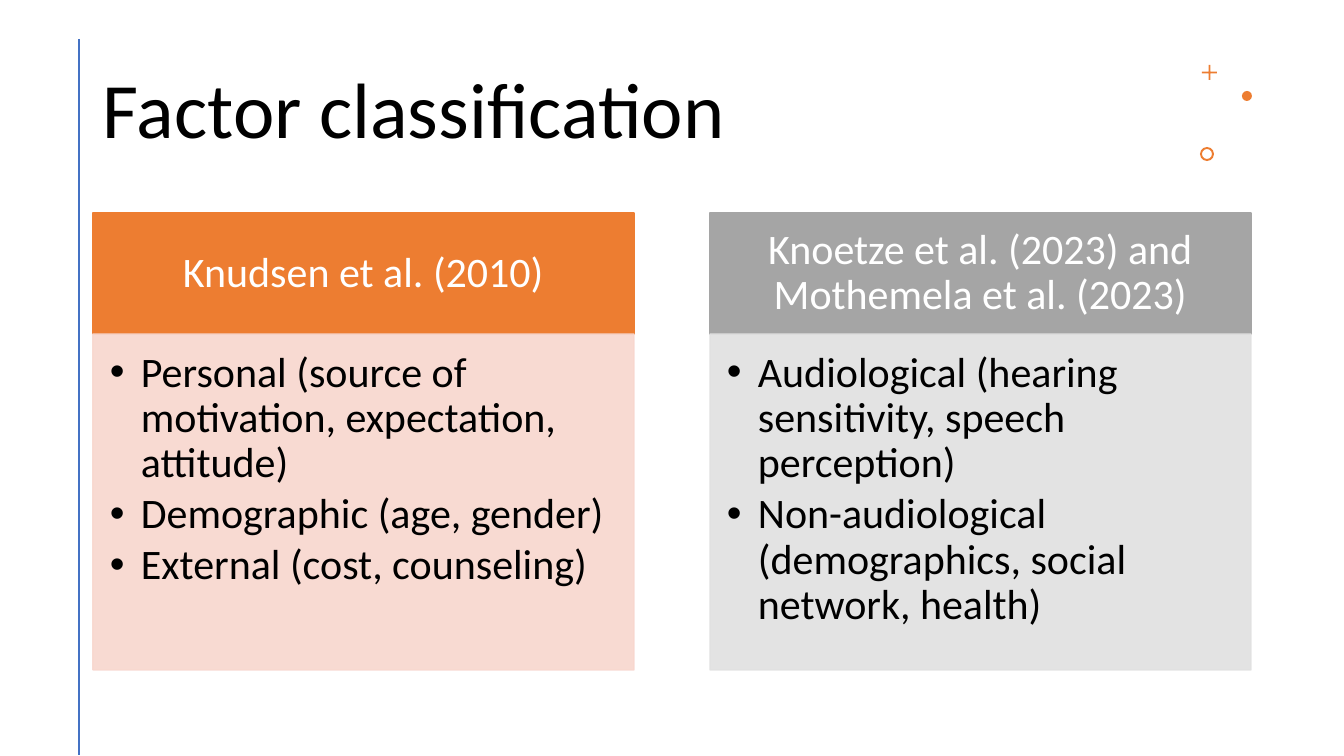
from dataclasses import dataclass

import pptx
import pptx.dml.color
import pptx.enum.shapes
import pptx.enum.text
import pptx.oxml
import pptx.oxml.ns
import pptx.util

PX = 914400 / 100.8
FONT = "Calibri"
COLORS = {
    "accent": "ED7D31",
    "accent_tint": "F8D7CE",
    "gray": "A5A5A5",
    "gray_tint": "E1E1E1",
    "rule": "4472C4",
    "black": "000000",
    "white": "FFFFFF",
}
SHAPES = pptx.enum.shapes.MSO_SHAPE
ANCHOR = pptx.enum.text.MSO_ANCHOR
ALIGN = pptx.enum.text.PP_ALIGN

# Layout in px
COLUMN_LEFT, COLUMN_STEP, COLUMN_WIDTH = 93, 617, 541
HEADER_TOP, HEADER_HEIGHT, PANEL_HEIGHT = 213, 121, 336
BULLET_INDENT = 31


@dataclass
class Column:
    heading: str
    bullets: list[str]
    color: str
    tint: str


@dataclass
class Ornament:
    kind: int
    left: int
    top: int
    size: int
    adjustment: float | None = None


COLUMNS = [
    Column("Knudsen et al. (2010)",
           ["Personal (source of motivation, expectation, attitude)",
            "Demographic (age, gender)",
            "External (cost, counseling)"],
           "accent", "accent_tint"),
    Column("Knoetze et al. (2023) and Mothemela et al. (2023)",
           ["Audiological (hearing sensitivity, speech perception)",
            "Non-audiological (demographics, social network, health)"],
           "gray", "gray_tint"),
]
ORNAMENTS = [
    Ornament(SHAPES.CROSS, 1202, 65, 15, 0.44),
    Ornament(SHAPES.OVAL, 1242, 91, 10),
    Ornament(SHAPES.DONUT, 1200, 147, 14, 0.14),
]


def px(length: int) -> int:
    return round(length * PX)


def rgb(name: str) -> pptx.dml.color.RGBColor:
    return pptx.dml.color.RGBColor.from_string(COLORS[name])


def element(xml: str):
    return pptx.oxml.parse_xml(xml.replace("/>", f' {pptx.oxml.ns.nsdecls("a")}/>'))


def set_frame(box, anchor, left: int, top: int, right: int, bottom: int):
    frame = box.text_frame
    frame.word_wrap = True
    frame.vertical_anchor = anchor
    frame.margin_left, frame.margin_top = px(left), px(top)
    frame.margin_right, frame.margin_bottom = px(right), px(bottom)
    return frame


def write(para, text: str, size: int, color: str, align=ALIGN.LEFT) -> None:
    para.alignment = align
    para.line_spacing = 0.9
    span = para.add_run()
    span.text = text
    span.font.name = FONT
    span.font.size = pptx.util.Pt(size)
    span.font.color.rgb = rgb(color)


def add_filled(page, kind, left: int, top: int, width: int, height: int, color: str):
    box = page.shapes.add_shape(kind, px(left), px(top), px(width), px(height))
    box.shadow.inherit = False
    box.fill.solid()
    box.fill.fore_color.rgb = rgb(color)
    box.line.fill.background()
    return box


def add_block(page, left: int, top: int, height: int, color: str):
    box = add_filled(page, SHAPES.RECTANGLE, left, top, COLUMN_WIDTH, height, color)
    box.line.color.rgb = rgb(color)
    box.line.width = pptx.util.Pt(1)
    return box


def add_column(page, column: Column, left: int) -> None:
    header = add_block(page, left, HEADER_TOP, HEADER_HEIGHT, column.color)
    frame = set_frame(header, ANCHOR.MIDDLE, 23, 13, 23, 13)
    write(frame.paragraphs[0], column.heading, 30, "white", ALIGN.CENTER)

    panel = add_block(page, left, HEADER_TOP + HEADER_HEIGHT, PANEL_HEIGHT, column.tint)
    for color in panel._element.spPr.iter(pptx.oxml.ns.qn("a:srgbClr")):
        color.append(element('<a:alpha val="90000"/>'))
    frame = set_frame(panel, ANCHOR.TOP, 17, 17, 23, 26)
    for index, text in enumerate(column.bullets):
        para = frame.add_paragraph() if index else frame.paragraphs[0]
        properties = para._p.get_or_add_pPr()
        properties.set("marL", str(px(BULLET_INDENT)))
        properties.set("indent", str(-px(BULLET_INDENT)))
        properties.append(element('<a:buFont typeface="Arial"/>'))
        properties.append(element('<a:buChar char="•"/>'))
        para.space_after = pptx.util.Pt(4)
        write(para, text, 30, "black")


def add_rule(page) -> None:
    rule = page.shapes.add_connector(
        pptx.enum.shapes.MSO_CONNECTOR.STRAIGHT, px(79), px(39), px(79), px(755))
    rule.line.color.rgb = rgb("rule")
    rule.line.width = pptx.util.Pt(2)
    rule._element.spPr.append(element("<a:effectLst/>"))


def add_ornament(page, ornament: Ornament) -> None:
    box = add_filled(page, ornament.kind, ornament.left, ornament.top,
                     ornament.size, ornament.size, "accent")
    if ornament.adjustment is not None:
        box.adjustments[0] = ornament.adjustment


def main() -> None:
    deck = pptx.Presentation()
    deck.slide_width, deck.slide_height = px(1344), px(756)
    page = deck.slides.add_slide(deck.slide_layouts[6])

    # Title, rule and corner ornaments
    title = page.shapes.add_textbox(px(COLUMN_LEFT), px(40), px(1085), px(146))
    frame = set_frame(title, ANCHOR.MIDDLE, 10, 5, 10, 5)
    write(frame.paragraphs[0], "Factor classification", 56, "black")
    add_rule(page)
    for ornament in ORNAMENTS:
        add_ornament(page, ornament)

    # Classification columns
    for index, column in enumerate(COLUMNS):
        add_column(page, column, COLUMN_LEFT + index * COLUMN_STEP)

    deck.save("out.pptx")


if __name__ == "__main__":
    main()
